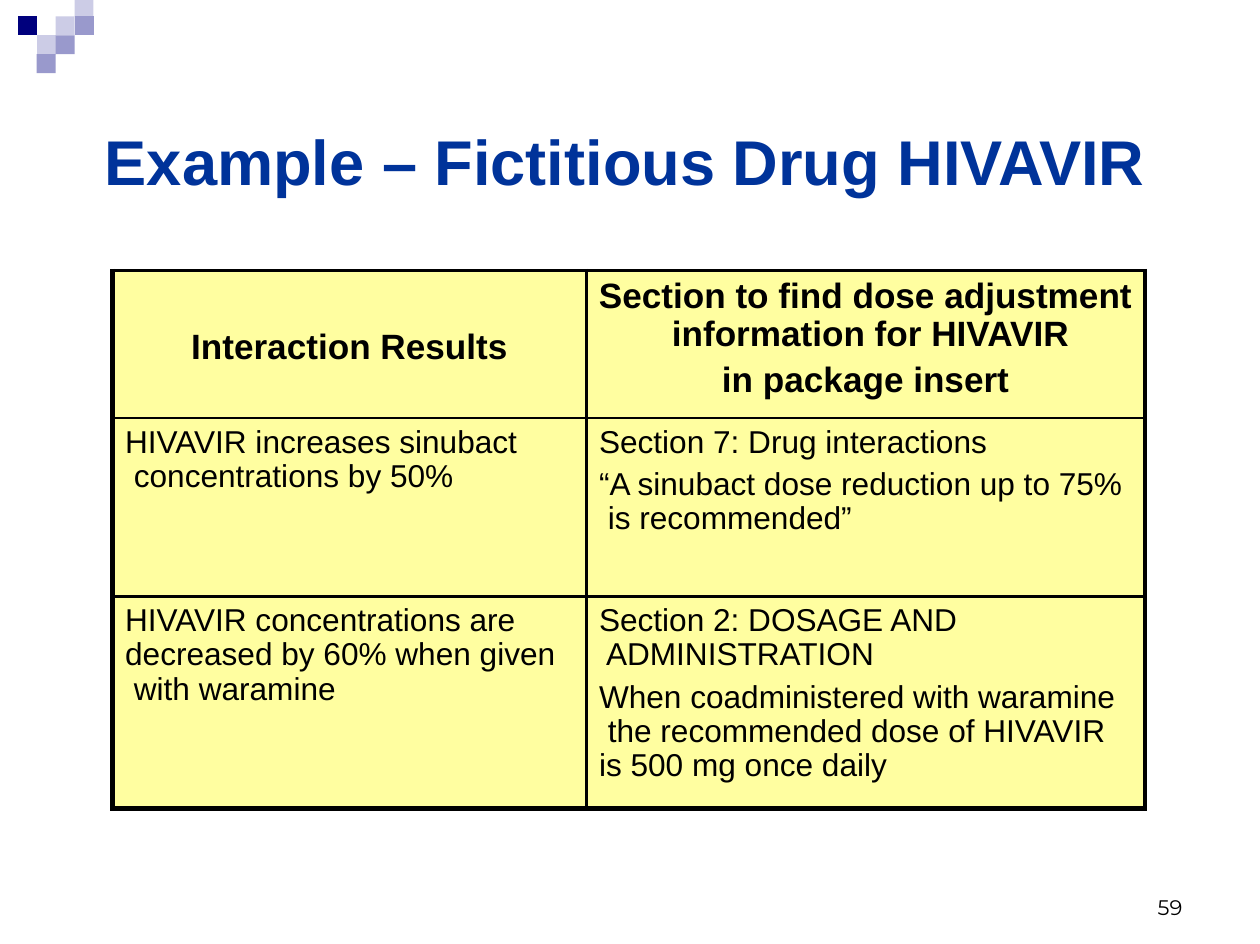
from dataclasses import dataclass

from lxml import etree
from pptx import Presentation
from pptx import util as u
from pptx.dml.color import RGBColor
from pptx.enum import text
from pptx.oxml import ns


@dataclass(frozen=True)
class Theme:
    font: str = "Arial"
    number_font: str = "Montserrat"
    title_size: float = 36
    header_size: float = 20
    body_size: float = 18
    number_size: float = 12
    title_color: str = "00339A"
    ink: str = "000000"
    cell_fill: str = "FFFEA0"
    pale: str = "CCCCE6"
    lilac: str = "9999CC"
    navy: str = "00007D"
    inner_line: float = 1.5
    thin_frame: float = 2.25
    thick_frame: float = 3


SQUARE = 0.15
SQUARES_LEFT = 0.14
SQUARES_TOP = -0.02

ROWS = [
    ("Interaction Results",
     "Section to find dose adjustment\v information for HIVAVIR\nin package insert"),
    ("HIVAVIR increases sinubact\v concentrations by 50%",
     "Section 7: Drug interactions\n"
     "“A sinubact dose reduction up to 75%\v is recommended”"),
    ("HIVAVIR concentrations are\vdecreased by 60% when given\v with waramine",
     "Section 2: DOSAGE AND\v ADMINISTRATION\n"
     "When coadministered with waramine\v the recommended dose of HIVAVIR\v"
     "is 500 mg once daily"),
]


class SlideBuilder:
    def __init__(self, deck, theme):
        self.theme = theme
        self.page = deck.slides.add_slide(deck.slide_layouts[5])

    def style(self, frame, words, size, color, font, bold=False,
              align=text.PP_ALIGN.LEFT, spacing=1.0, gap=0):
        frame.text = words
        for index, para in enumerate(frame.paragraphs):
            para.alignment = align
            para.line_spacing = spacing
            para.space_before = u.Pt(gap if index else 0)
            for span in para.runs:
                span.font.size = u.Pt(size)
                span.font.name = font
                span.font.bold = bold
                span.font.color.rgb = RGBColor.from_string(color)

    def margins(self, target, left, top, right=0, bottom=0):
        target.margin_left, target.margin_top = u.Inches(left), u.Inches(top)
        target.margin_right, target.margin_bottom = u.Inches(right), u.Inches(bottom)

    def place(self, box, left, top, width, height):
        box.left, box.top = u.Inches(left), u.Inches(top)
        box.width, box.height = u.Inches(width), u.Inches(height)

    def title(self, words, *area):
        box = self.page.shapes.title
        self.place(box, *area)
        frame = box.text_frame
        frame.auto_size = text.MSO_AUTO_SIZE.NONE
        frame.vertical_anchor = text.MSO_ANCHOR.TOP
        self.margins(frame, 0.01, 0.06)
        self.style(frame, words, self.theme.title_size, self.theme.title_color,
                   self.theme.font, bold=True)

    def number(self, words, *area):
        box = self.page.shapes.add_textbox(*map(u.Inches, area))
        frame = box.text_frame
        frame.word_wrap = True
        self.margins(frame, 0.04, 0.23)
        self.style(frame, words, self.theme.number_size, self.theme.ink,
                   self.theme.number_font)

    def squares(self, color, *cells):
        outline = None
        for column, row in cells:
            left = SQUARES_LEFT + column * SQUARE
            top = SQUARES_TOP + row * SQUARE
            x1, x2 = u.Inches(left), u.Inches(left + SQUARE)
            y1, y2 = u.Inches(max(top, 0)), u.Inches(top + SQUARE)
            if outline is None:
                outline = self.page.shapes.build_freeform(x1, y1)
            else:
                outline.move_to(x1, y1)
            outline.add_line_segments([(x2, y1), (x2, y2), (x1, y2)], close=True)
        shape = outline.convert_to_shape()
        shape.shadow.inherit = False
        shape.fill.solid()
        shape.fill.fore_color.rgb = RGBColor.from_string(color)
        shape.line.fill.background()

    def borders(self, cell, **widths):
        properties = cell._tc.get_or_add_tcPr()
        for side in "LRTB":
            line = etree.SubElement(properties, ns.qn(f"a:ln{side}"),
                                    w=str(u.Pt(widths[side])))
            fill = etree.SubElement(line, ns.qn("a:solidFill"))
            etree.SubElement(fill, ns.qn("a:srgbClr"), val=self.theme.ink)

    def table(self, rows, left, top, widths, heights):
        theme = self.theme
        table = self.page.shapes.add_table(
            len(heights), len(widths), u.Inches(left), u.Inches(top),
            u.Inches(sum(widths)), u.Inches(sum(heights))).table
        table.first_row = table.horz_banding = False
        for column, width in zip(table.columns, widths):
            column.width = u.Inches(width)
        for row, height in zip(table.rows, heights):
            row.height = u.Inches(height)
        for r, entries in enumerate(rows):
            header = r == 0
            for c, words in enumerate(entries):
                cell = table.cell(r, c)
                self.borders(
                    cell,
                    L=theme.inner_line if c else theme.thick_frame,
                    R=theme.thin_frame if c == len(widths) - 1 else theme.inner_line,
                    T=theme.thin_frame if header else theme.inner_line,
                    B=theme.thick_frame if r == len(heights) - 1 else theme.inner_line)
                cell.fill.solid()
                cell.fill.fore_color.rgb = RGBColor.from_string(theme.cell_fill)
                self.margins(cell, 0 if header else 0.1, 0.06)
                cell.vertical_anchor = (text.MSO_ANCHOR.MIDDLE if header and c == 0
                                        else text.MSO_ANCHOR.TOP)
                self.style(cell.text_frame, words,
                           theme.header_size if header else theme.body_size,
                           theme.ink, theme.font, bold=header,
                           align=text.PP_ALIGN.CENTER if header else text.PP_ALIGN.LEFT,
                           spacing=0.97, gap=4.5)


def main():
    deck = Presentation()
    deck.slide_width, deck.slide_height = u.Inches(9.97), u.Inches(7.47)
    theme = Theme()
    slide = SlideBuilder(deck, theme)
    slide.squares(theme.pale, (2, 1), (3, 0))
    slide.squares(theme.lilac, (3, 1))
    slide.squares(theme.pale, (1, 2))
    slide.squares(theme.navy, (0, 1))
    slide.squares(theme.lilac, (2, 2), (1, 3))
    slide.table(ROWS, 0.89, 2.14, [3.75, 4.42], [1.17, 1.41, 1.68])
    slide.number("59", 9.12, 6.86, 0.31, 0.43)
    slide.title("Example – Fictitious Drug HIVAVIR", 0.82, 0.91, 8.33, 0.63)
    deck.save("out.pptx")


if __name__ == "__main__":
    main()
